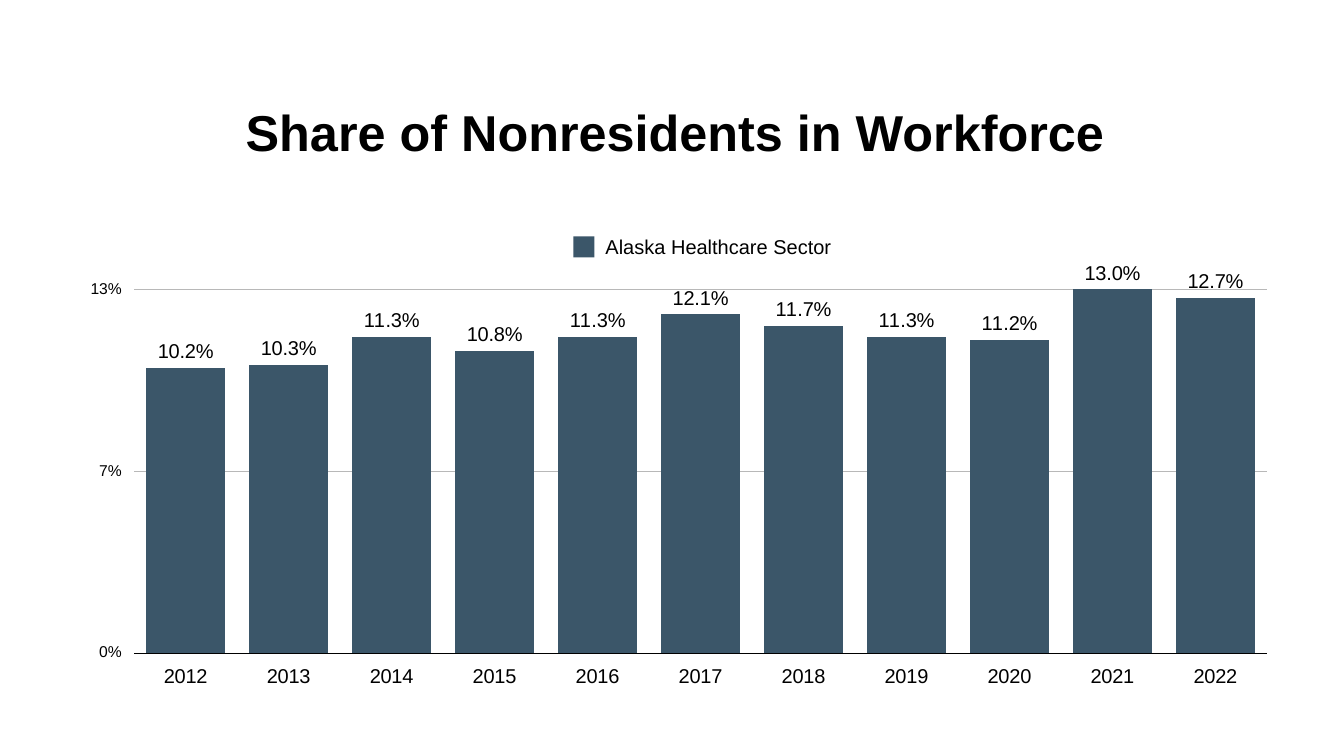
from lxml.etree import SubElement
from pptx import Presentation
from pptx.chart.data import CategoryChartData
from pptx.dml.color import RGBColor
from pptx.enum.chart import XL_CHART_TYPE as ChartType
from pptx.enum.chart import XL_LABEL_POSITION as LabelPosition
from pptx.enum.chart import XL_TICK_MARK as TickMark
from pptx.enum.shapes import MSO_CONNECTOR as Connector
from pptx.enum.shapes import MSO_SHAPE as Shape
from pptx.enum.text import MSO_ANCHOR as Anchor
from pptx.enum.text import PP_ALIGN as Align
from pptx.oxml.ns import qn
from pptx.util import Emu, Pt

PX = 914400 / 125
BLACK = RGBColor(0x00, 0x00, 0x00)
GRID_GREY = RGBColor(0xB8, 0xB8, 0xB8)
SLATE = RGBColor(0x3B, 0x56, 0x69)

SECTOR = "Alaska Healthcare Sector"
SHARES = {
    2012: 0.102, 2013: 0.103, 2014: 0.113, 2015: 0.108, 2016: 0.113, 2017: 0.121,
    2018: 0.117, 2019: 0.113, 2020: 0.112, 2021: 0.130, 2022: 0.127,
}
TOP_SHARE = 0.13

# Boxes in px: left, top, width, height
TITLE_BOX = (225, 97, 900, 68)
CHART_BOX = (60, 200, 1225, 510)
PLOT_BOX = (134, 289, 1132, 363)
LEGEND_KEY_BOX = (573, 236, 21, 21)
LEGEND_TEXT_BOX = (605, 232, 240, 28)


def px(length):
    return Emu(round(length * PX))


class Deck:
    font_name = "Arial"

    def __init__(self, width, height):
        self.presentation = Presentation()
        self.presentation.slide_width = px(width)
        self.presentation.slide_height = px(height)
        self.slide = self.presentation.slides.add_slide(self.presentation.slide_layouts[6])

    def style(self, font, size, bold=False):
        font.name = self.font_name
        font.size = Pt(size)
        font.bold = bold
        font.color.rgb = BLACK

    def text(self, box, words, size, bold=False, align=Align.LEFT):
        frame = self.slide.shapes.add_textbox(*map(px, box)).text_frame
        frame.word_wrap = True
        frame.vertical_anchor = Anchor.MIDDLE
        frame.margin_left = frame.margin_right = frame.margin_top = frame.margin_bottom = 0
        paragraph = frame.paragraphs[0]
        paragraph.alignment = align
        run = paragraph.add_run()
        run.text = words
        self.style(run.font, size, bold)

    def rule(self, left, right, y, color, weight):
        line = self.slide.shapes.add_connector(
            Connector.STRAIGHT, px(left), px(y), px(right), px(y))
        line.line.color.rgb = color
        line.line.width = Pt(weight)
        SubElement(line._element.spPr, qn("a:effectLst"))

    def square(self, box, color):
        key = self.slide.shapes.add_shape(Shape.RECTANGLE, *map(px, box))
        key.shadow.inherit = False
        key.fill.solid()
        key.fill.fore_color.rgb = color
        key.line.fill.background()

    def place_plot(self, plot_area, box, chart_box):
        """Fix the inner plot area, as fractions of the chart."""
        for old in plot_area.findall(qn("c:layout")):
            plot_area.remove(old)
        layout = SubElement(plot_area, qn("c:layout"))
        plot_area.insert(0, layout)
        manual = SubElement(layout, qn("c:manualLayout"))
        left, top, width, height = chart_box
        settings = [("layoutTarget", "inner"), ("xMode", "edge"), ("yMode", "edge")]
        settings += zip("xywh", (
            (box[0] - left) / width, (box[1] - top) / height,
            box[2] / width, box[3] / height,
        ))
        for name, value in settings:
            SubElement(manual, qn("c:" + name)).set("val", str(value))

    def clear_background(self, chart_space):
        """Let the rules behind the chart show through."""
        for parent in (chart_space, chart_space.chart.plotArea):
            properties = SubElement(parent, qn("c:spPr"))
            SubElement(properties, qn("a:noFill"))
            SubElement(SubElement(properties, qn("a:ln")), qn("a:noFill"))
            if parent is chart_space:
                chart_space.chart.addnext(properties)

    def column_chart(self, box, plot_box, series_name, shares, top_share):
        chart_data = CategoryChartData(number_format="0.0%")
        chart_data.categories = [str(year) for year in shares]
        chart_data.add_series(series_name, shares.values())
        chart = self.slide.shapes.add_chart(
            ChartType.COLUMN_CLUSTERED, *map(px, box), chart_data).chart
        self.style(chart.font, 11.5)
        chart.has_title = False
        chart.has_legend = False

        # Columns and their labels
        columns = chart.plots[0]
        columns.gap_width = 30
        columns.vary_by_categories = False
        fill = columns.series[0].format.fill
        fill.solid()
        fill.fore_color.rgb = SLATE
        columns.has_data_labels = True
        labels = columns.data_labels
        labels.show_value = True
        labels.number_format = "0.0%"
        labels.number_format_is_linked = False
        labels.position = LabelPosition.OUTSIDE_END
        self.style(labels.font, 11.5)

        # Axes: unpainted tick marks hold the labels off the plot
        years, scale = chart.category_axis, chart.value_axis
        for axis, size in ((years, 11.5), (scale, 9)):
            axis.major_tick_mark = TickMark.OUTSIDE
            axis.format.line.fill.background()
            axis.has_major_gridlines = False
            self.style(axis.tick_labels.font, size)
        scale.minimum_scale = 0
        scale.maximum_scale = top_share
        scale.major_unit = top_share / 2
        scale.tick_labels.number_format = "0%"
        scale.tick_labels.number_format_is_linked = False

        self.place_plot(chart._chartSpace.chart.plotArea, plot_box, box)
        self.clear_background(chart._chartSpace)

    def save(self):
        self.presentation.save("out.pptx")


def main():
    deck = Deck(1343, 754)
    deck.text(TITLE_BOX, "Share of Nonresidents in Workforce", 29, True, Align.CENTER)

    # Grid and baseline behind the columns
    left, top, width, height = PLOT_BOX
    for y in (top, top + height / 2):
        deck.rule(left, left + width, y, GRID_GREY, 0.25)
    deck.rule(left, left + width, top + height, BLACK, 0.4)

    deck.column_chart(CHART_BOX, PLOT_BOX, SECTOR, SHARES, TOP_SHARE)

    # Legend
    deck.square(LEGEND_KEY_BOX, SLATE)
    deck.text(LEGEND_TEXT_BOX, SECTOR, 11.5)
    deck.save()


if __name__ == "__main__":
    main()
